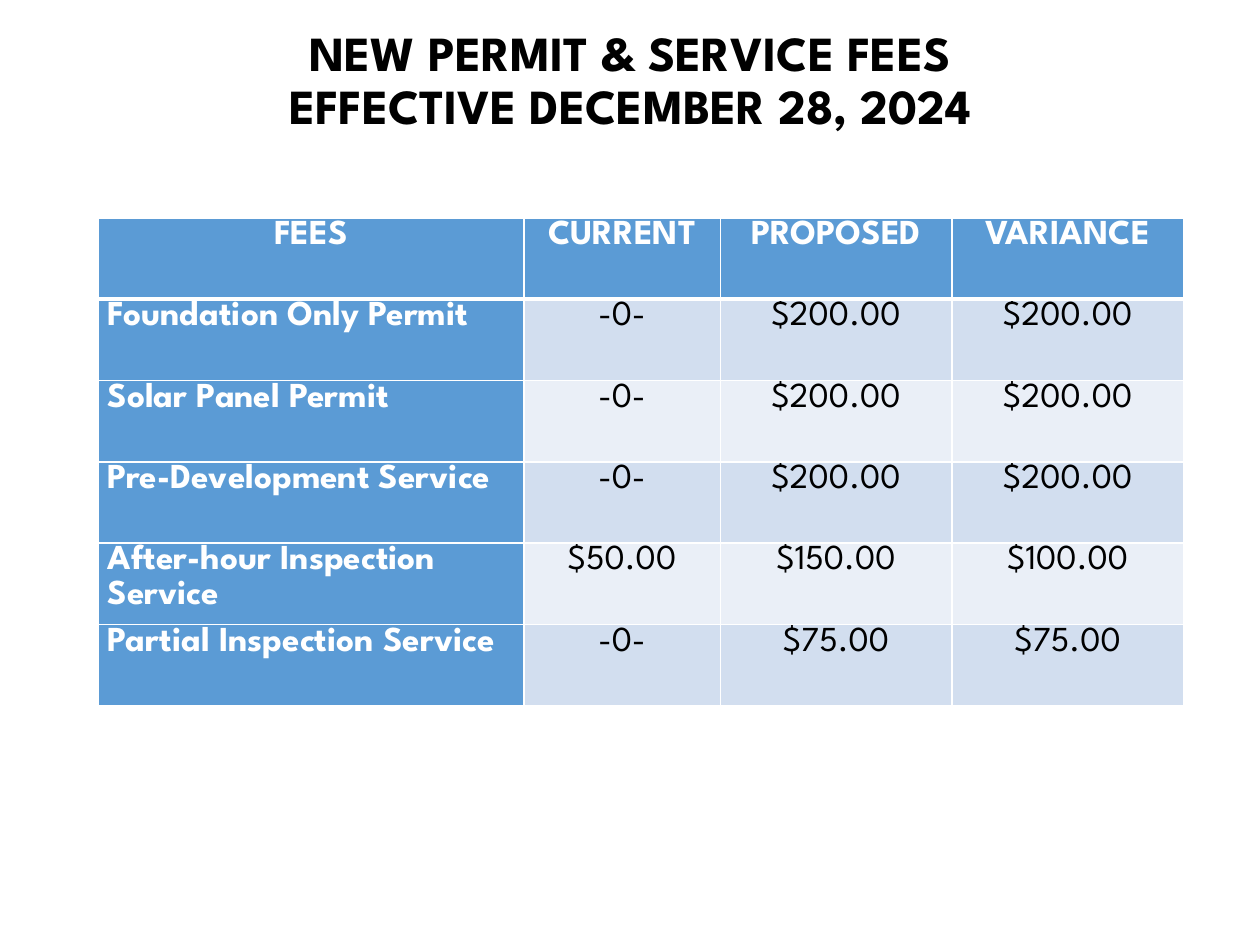
from typing import NamedTuple

from lxml import etree
from pptx import Presentation
from pptx.dml.color import RGBColor
from pptx.enum.text import MSO_ANCHOR, PP_ALIGN
from pptx.oxml.ns import qn
from pptx.util import Cm, Pt

LEFT, CENTER = PP_ALIGN.LEFT, PP_ALIGN.CENTER
TOP, MIDDLE = MSO_ANCHOR.TOP, MSO_ANCHOR.MIDDLE

FONT = "League Spartan"
BLACK = RGBColor(0x00, 0x00, 0x00)
WHITE = RGBColor(0xFF, 0xFF, 0xFF)
BLUE = RGBColor(0x5B, 0x9B, 0xD5)
BANDS = (RGBColor(0xD2, 0xDE, 0xEF), RGBColor(0xEA, 0xEF, 0xF7))

WIDTHS = (8.58, 3.96, 4.67, 4.67)
HEIGHT = 1.64


class Fee(NamedTuple):
    name: str
    current: str
    proposed: str
    variance: str


TITLE = ("NEW PERMIT & SERVICE FEES", "EFFECTIVE DECEMBER 28, 2024")
ROWS = (
    Fee("FEES", "CURRENT", "PROPOSED", "VARIANCE"),
    Fee("Foundation Only Permit", "-0-", "$200.00", "$200.00"),
    Fee("Solar Panel Permit", "-0-", "$200.00", "$200.00"),
    Fee("Pre-Development Service", "-0-", "$200.00", "$200.00"),
    Fee("After-hour Inspection Service", "$50.00", "$150.00", "$100.00"),
    Fee("Partial Inspection Service", "-0-", "$75.00", "$75.00"),
)


def add_run(para, text: str, size: int, color: RGBColor, bold: bool) -> None:
    run = para.add_run()
    run.text = text
    font = run.font
    font.name, font.size, font.bold = FONT, Pt(size), bold
    font.color.rgb = color


def add_edge(cell, side: str, width: float) -> None:
    props = cell._tc.get_or_add_tcPr()
    line = etree.SubElement(props, qn(f"a:ln{side}"), w=str(Pt(width)))
    fill = etree.SubElement(line, qn("a:solidFill"))
    etree.SubElement(fill, qn("a:srgbClr"), val=str(WHITE))


def fill_cell(cell, text: str, row: int, col: int) -> None:
    strong = row == 0 or col == 0
    cell.margin_left = cell.margin_right = Cm(0.19)
    cell.margin_top = cell.margin_bottom = 0
    cell.vertical_anchor = TOP

    # Borders go before the fill; the line under the header is thicker
    for side in "LRTB":
        thick = (row, side) in ((0, "B"), (1, "T"))
        add_edge(cell, side, 3 if thick else 1)
    cell.fill.solid()
    cell.fill.fore_color.rgb = BLUE if strong else BANDS[(row - 1) % 2]

    para = cell.text_frame.paragraphs[0]
    para.alignment = LEFT if row and col == 0 else CENTER
    para.line_spacing = 1.07
    add_run(para, text, 20, WHITE if strong else BLACK, strong)


def add_title(slide) -> None:
    title = slide.shapes.title
    title.left, title.top = Cm(1.75), Cm(0)
    title.width, title.height = Cm(21.9), Cm(4.39)
    frame = title.text_frame
    frame.word_wrap = True
    frame.vertical_anchor = MIDDLE
    frame.margin_bottom = Cm(1.19)
    para = frame.paragraphs[0]
    para.alignment = CENTER
    para.line_spacing = 0.9
    for num, text in enumerate(TITLE):
        if num:
            para.add_line_break()
        add_run(para, text, 28, BLACK, True)


def add_fees(slide) -> None:
    table = slide.shapes.add_table(
        len(ROWS), len(WIDTHS), Cm(1.98), Cm(4.39),
        Cm(sum(WIDTHS)), Cm(HEIGHT * len(ROWS))).table
    for col, width in zip(table.columns, WIDTHS):
        col.width = Cm(width)
    for row, fee in enumerate(ROWS):
        table.rows[row].height = Cm(HEIGHT)
        for col, text in enumerate(fee):
            fill_cell(table.cell(row, col), text, row, col)


def main() -> None:
    deck = Presentation()
    deck.slide_width, deck.slide_height = Cm(25.4), Cm(19.05)
    slide = deck.slides.add_slide(deck.slide_layouts[5])
    add_title(slide)
    add_fees(slide)
    deck.save("out.pptx")


if __name__ == "__main__":
    main()
